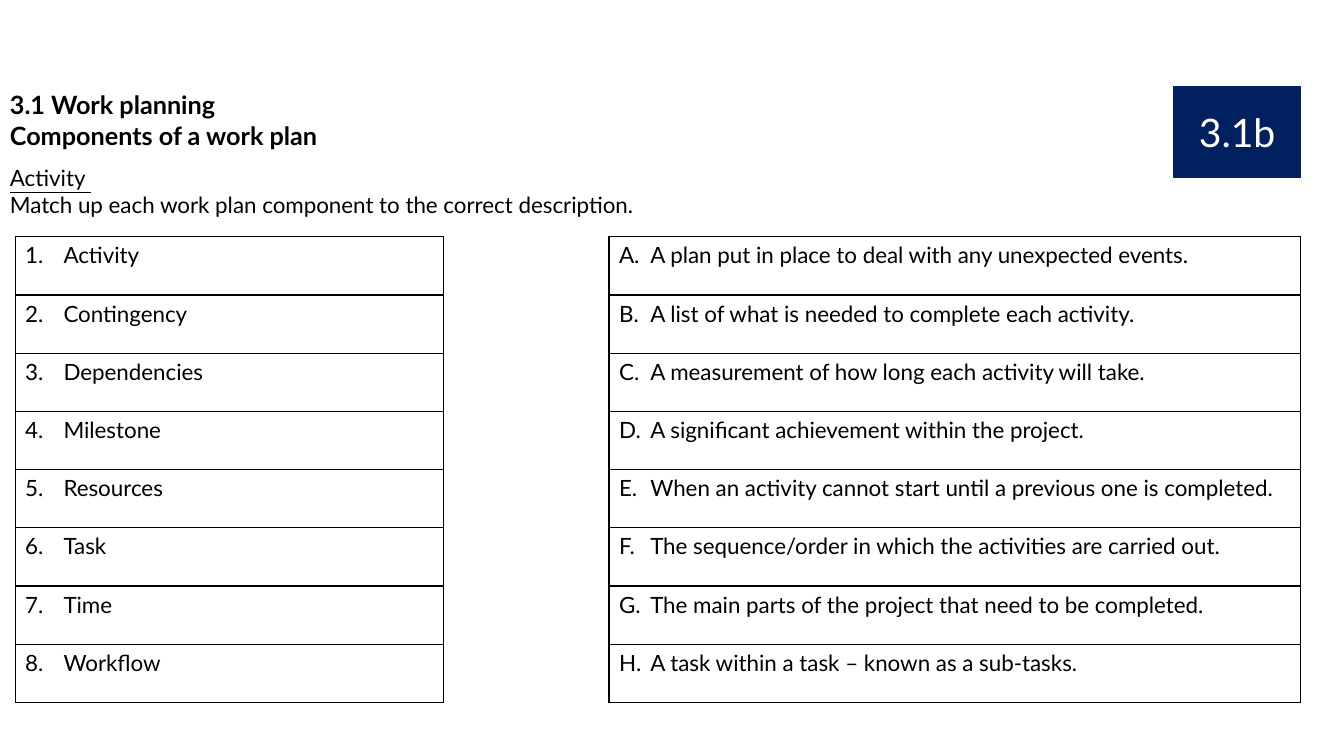
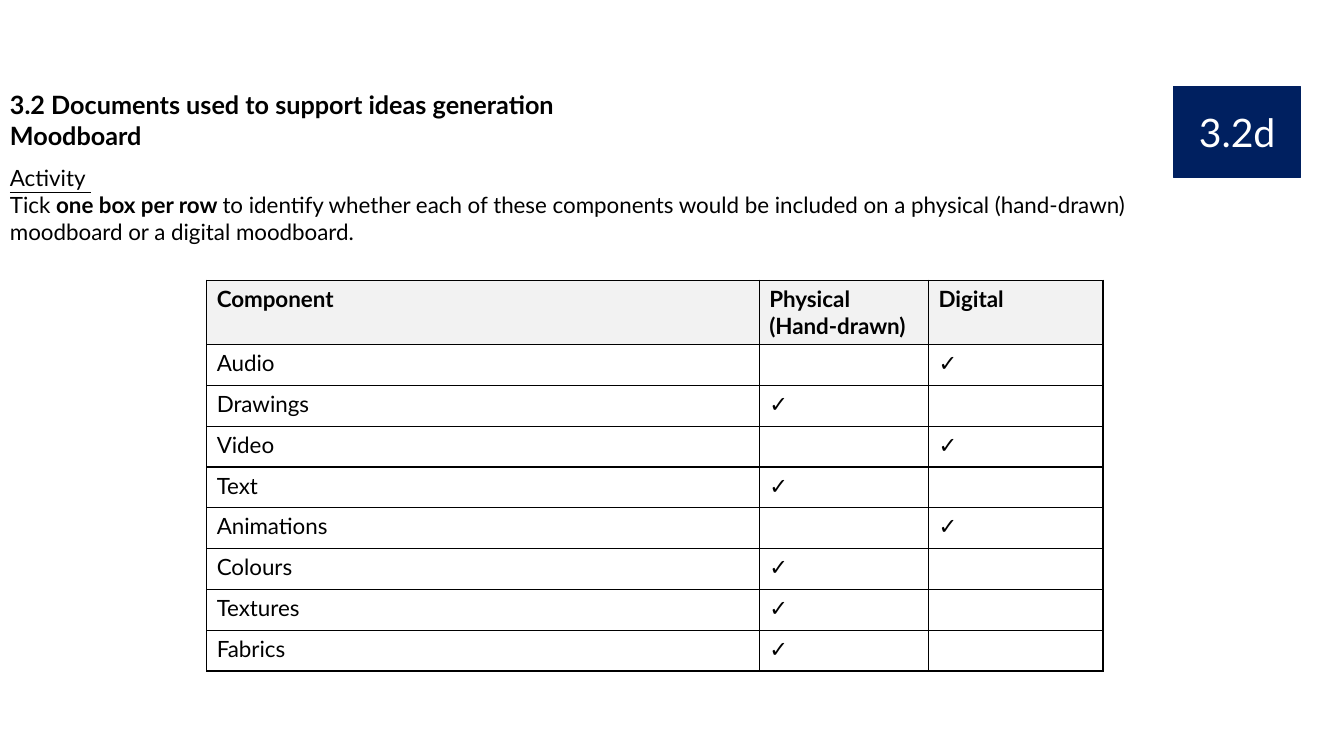
import pptx
import pptx.util
import pptx.dml.color
import pptx.enum.shapes
import pptx.enum.text
import pptx.oxml.ns
from lxml import etree

Inches = pptx.util.Inches
NAVY, WHITE, BLACK, GREY = "002060", "FFFFFF", "000000", "F2F2F2"
FONT = "Lato"
TITLE = {"size": pptx.util.Pt(18), "bold": True}
BODY = {"size": pptx.util.Pt(16)}
BOLD = {**BODY, "bold": True}
UNDERLINED = {**BODY, "underline": True}
BADGE = {"size": pptx.util.Pt(28)}
TICK = "✓"

COMPONENTS = ["Activity", "Contingency", "Dependencies", "Milestone",
              "Resources", "Task", "Time", "Workflow"]
DESCRIPTIONS = [
    "A plan put in place to deal with any unexpected events.",
    "A list of what is needed to complete each activity.",
    "A measurement of how long each activity will take.",
    "A significant achievement within the project.",
    "When an activity cannot start until a previous one is completed.",
    "The sequence/order in which the activities are carried out.",
    "The main parts of the project that need to be completed.",
    "A task within a task – known as a sub-tasks.",
]
MOODBOARD_HEADS = ["Component", "Physical (Hand-drawn)", "Digital"]
MOODBOARD_ITEMS = [
    ("Audio", "digital"), ("Drawings", "physical"), ("Video", "digital"),
    ("Text", "physical"), ("Animations", "digital"), ("Colours", "physical"),
    ("Textures", "physical"), ("Fabrics", "physical"),
]


def rgb(value):
    return pptx.dml.color.RGBColor.from_string(value)


def add_run(p, text, style, color=BLACK):
    r = p.add_run()
    r.text = text
    for name, value in {"name": FONT, **style}.items():
        setattr(r.font, name, value)
    r.font.color.rgb = rgb(color)


def add_text(s, box, paragraphs):
    """Each paragraph is a list of (text, style) runs."""
    tf = s.shapes.add_textbox(*map(Inches, box)).text_frame
    tf.word_wrap = True
    for i, runs in enumerate(paragraphs):
        p = tf.add_paragraph() if i else tf.paragraphs[0]
        for text, style in runs:
            add_run(p, text, style)


def add_badge(s, box, text):
    sp = s.shapes.add_shape(pptx.enum.shapes.MSO_SHAPE.RECTANGLE, *map(Inches, box))
    sp.shadow.inherit = False
    sp.fill.solid()
    sp.fill.fore_color.rgb = rgb(NAVY)
    sp.line.color.rgb = rgb(NAVY)
    sp.line.width = pptx.util.Pt(1)
    tf = sp.text_frame
    tf.vertical_anchor = pptx.enum.text.MSO_ANCHOR.MIDDLE
    p = tf.paragraphs[0]
    p.alignment = pptx.enum.text.PP_ALIGN.CENTER
    add_run(p, text, BADGE, WHITE)


def add_xml(parent, tag, **attributes):
    return etree.SubElement(parent, pptx.oxml.ns.qn(tag), attributes)


def set_number(p, scheme, start, indent):
    pPr = p._p.get_or_add_pPr()
    pPr.set("marL", str(Inches(indent)))
    pPr.set("indent", str(-Inches(indent)))
    add_xml(pPr, "a:buFont", typeface="+mj-lt")
    add_xml(pPr, "a:buAutoNum", type=scheme, startAt=str(start))


def format_cell(cell, sides="LRTB", fill=None):
    tcPr = cell._tc.get_or_add_tcPr()
    for side in "LRTB":
        ln = add_xml(tcPr, "a:ln" + side, w=str(pptx.util.Pt(1)))
        if side in sides:
            add_xml(add_xml(ln, "a:solidFill"), "a:srgbClr", val=BLACK)
        else:
            add_xml(ln, "a:noFill")
    if fill:
        cell.fill.solid()
        cell.fill.fore_color.rgb = rgb(fill)
    else:
        cell.fill.background()


def add_grid(s, box, widths, heights):
    shape = s.shapes.add_table(len(heights), len(widths), *map(Inches, box))
    table = shape.table
    table.first_row = table.horz_banding = False
    for column, width in zip(table.columns, widths):
        column.width = Inches(width)
    for row, height in zip(table.rows, heights):
        row.height = Inches(height)
    return table


def add_matching_table(s, box):
    count = len(COMPONENTS)
    table = add_grid(s, box, [4.25, 1.64, box[2] - 5.89], [box[3] / count] * count)
    for i, (component, description) in enumerate(zip(COMPONENTS, DESCRIPTIONS)):
        left, gap, right = table.rows[i].cells
        for cell, text, scheme, indent in (
                (left, component, "arabicPeriod", 0.38),
                (right, description, "alphaUcPeriod", 0.31)):
            format_cell(cell)
            p = cell.text_frame.paragraphs[0]
            set_number(p, scheme, i + 1, indent)
            add_run(p, text, BODY)
        format_cell(gap, sides="LR")


def add_tick_table(s, box):
    head = 0.64
    count = len(MOODBOARD_ITEMS)
    rows = [MOODBOARD_HEADS]
    for item, kind in MOODBOARD_ITEMS:
        rows.append([item] + [TICK if kind == k else "" for k in ("physical", "digital")])
    table = add_grid(s, box, [5.48, 1.68, box[2] - 7.16],
                     [head] + [(box[3] - head) / count] * count)
    for i, texts in enumerate(rows):
        for cell, text in zip(table.rows[i].cells, texts):
            format_cell(cell, fill=None if i else GREY)
            if text:
                add_run(cell.text_frame.paragraphs[0], text, BODY if i else BOLD)


def add_activity_slide(prs, titles, code, task, task_height):
    """Shared layout: title, code badge and activity instructions."""
    s = prs.slides.add_slide(prs.slide_layouts[6])
    add_text(s, (0, 0.84, 10.43, 0.71), [[(title, TITLE)] for title in titles])
    add_badge(s, (11.64, 0.86, 1.26, 0.9), code)
    add_text(s, (0, 1.58, 11.81, task_height), [[("Activity ", UNDERLINED)], task])
    return s


def main():
    prs = pptx.Presentation()
    prs.slide_width, prs.slide_height = Inches(13.33), Inches(7.5)

    # Work plan matching
    s = add_activity_slide(
        prs, ["3.1 Work planning", "Components of a work plan"], "3.1b",
        [("Match up each work plan component to the correct description.", BODY)], 0.64)
    add_matching_table(s, (0.15, 2.35, 12.75, 4.62))

    # Moodboard ticks
    s = add_activity_slide(
        prs, ["3.2 Documents used to support ideas generation", "Moodboard"], "3.2d",
        [("Tick ", BODY), ("one box per row ", BOLD),
         ("to identify whether each of these components would be included on a "
          "physical (hand-drawn) moodboard or a digital moodboard.", BODY)], 0.91)
    add_tick_table(s, (2.05, 2.78, 8.89, 3.88))

    prs.save("out.pptx")


if __name__ == "__main__":
    main()
